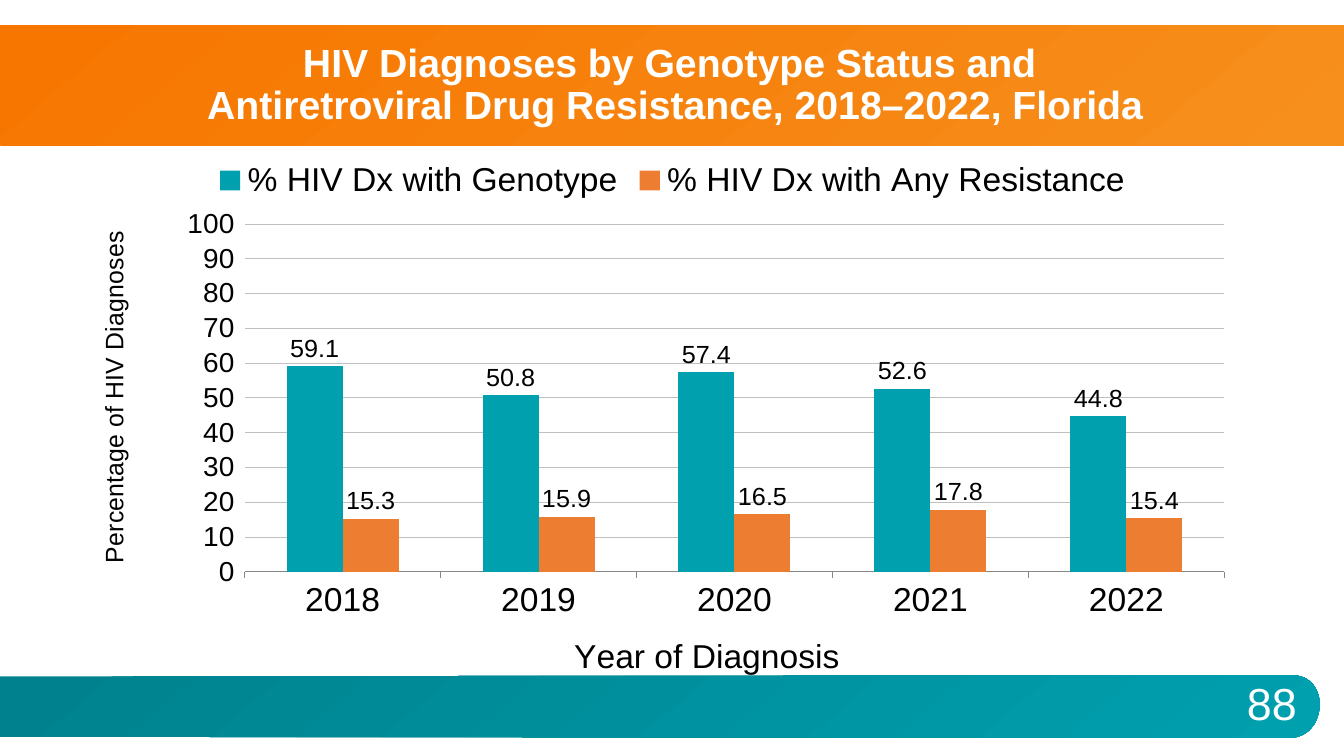
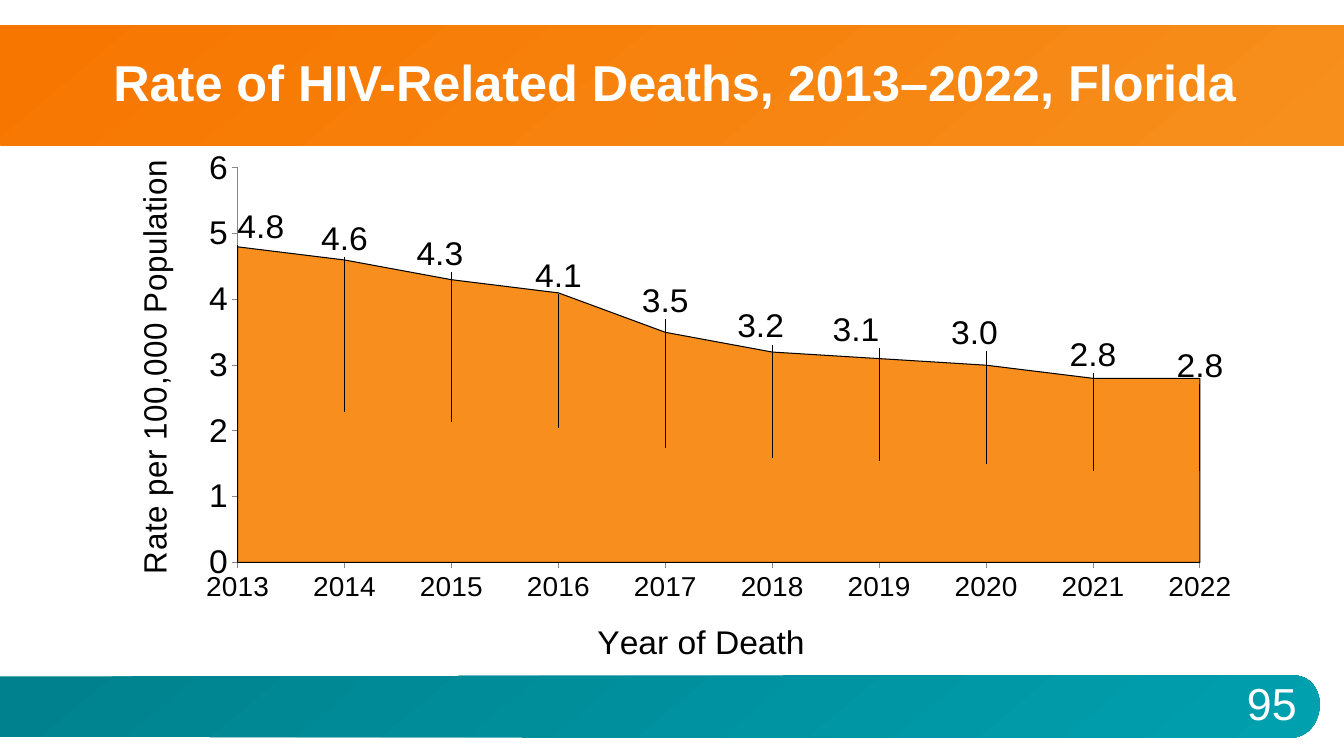
from lxml import etree
from pptx import Presentation
from pptx import util as u
from pptx.chart.data import CategoryChartData
from pptx.dml.color import RGBColor
from pptx.enum import chart as charts, shapes, text
from pptx.oxml import ns

WIDTH, HEIGHT = 13.33, 7.5
FONT = "Arial"
COLORS = {
    "white": "FFFFFF", "black": "000000", "grid": "BFBFBF", "axis": "878787",
    "teal_dark": "00828E", "teal": "00A0AF",
    "orange_dark": "F77600", "orange": "F78F1C",
    "resistance": "ED7D31", "area": "F78E1E",
}
TITLE_BAND = (0, 0.25, WIDTH, 1.19)
TITLE_BOX = (0.74, 0.26, 11.91, 1.18)
NUMBER_BOX = (12.07, 6.68, 1.09, 0.59)
FOOTER_TOP, FOOTER_BOTTOM = 6.7, 7.32
FOOTER_CURVE = ((12.8, FOOTER_TOP), (13.2, 6.68), (13.17, 7.31), (12.8, FOOTER_BOTTOM))
UNITS_PER_INCH = 1000


def color(name):
    """Return the named colour."""
    return RGBColor.from_string(COLORS[name])


def inches(box):
    """Convert a box to lengths."""
    return [u.Inches(value) for value in box]


def style_font(font, size, name="black", bold=False):
    """Set the face, size, colour and weight of a font."""
    font.name, font.size, font.bold = FONT, u.Pt(size), bold
    font.color.rgb = color(name)


def style_band(shape, start, end):
    """Give a band its diagonal gradient without outline or shadow."""
    shape.shadow.inherit = False
    shape.line.fill.background()
    shape.fill.gradient()
    shape.fill.gradient_angle = 310
    for stop, name, position in zip(shape.fill.gradient_stops, (start, end), (0.02, 1)):
        stop.color.rgb = color(name)
        stop.position = position


def bezier(points, steps=24):
    """Return points along a cubic curve."""
    def at(share):
        """Return the point at one share of the curve."""
        rest = 1 - share
        weights = (rest ** 3, 3 * rest ** 2 * share, 3 * rest * share ** 2, share ** 3)
        return tuple(sum(w * p[axis] for w, p in zip(weights, points)) for axis in (0, 1))
    return [at(step / steps) for step in range(steps + 1)]


def add_text(slide, box, words, size, bold=False, spacing=1):
    """Add centred white text in a box."""
    frame = slide.shapes.add_textbox(*inches(box)).text_frame
    frame.word_wrap = True
    frame.vertical_anchor = text.MSO_ANCHOR.MIDDLE
    frame.text = words
    paragraph = frame.paragraphs[0]
    paragraph.alignment = text.PP_ALIGN.CENTER
    paragraph.line_spacing = spacing
    style_font(paragraph.font, size, "white", bold)


def add_bands(slide, number):
    """Draw the footer with its number and the title band."""
    outline = [(round(x * UNITS_PER_INCH), round(y * UNITS_PER_INCH))
               for x, y in bezier(FOOTER_CURVE) + [(0, 7.31), (0, 6.71)]]
    builder = slide.shapes.build_freeform(*outline[0], scale=u.Inches(1) / UNITS_PER_INCH)
    builder.add_line_segments(outline[1:], close=True)
    style_band(builder.convert_to_shape(), "teal_dark", "teal")
    band = slide.shapes.add_shape(shapes.MSO_SHAPE.RECTANGLE, *inches(TITLE_BAND))
    style_band(band, "orange_dark", "orange")
    add_text(slide, NUMBER_BOX, number, 32)


def chart_element(parent, tag, index, value=None):
    """Insert a chart element at an index of its parent."""
    child = etree.Element(ns.qn(f"c:{tag}"))
    if value is not None:
        child.set("val", str(value))
    parent.insert(index, child)
    return child


def set_layout(parent, index, places, inner=False, edge=True):
    """Place a chart part by shares of the chart's size."""
    for old in parent.findall(ns.qn("c:layout")):
        parent.remove(old)
    manual = chart_element(chart_element(parent, "layout", index), "manualLayout", 0)
    settings = [("layoutTarget", "inner")] if inner else []
    settings += [("xMode", "edge"), ("yMode", "edge")] if edge else []
    for tag, value in settings + list(zip("xywh", places)):
        chart_element(manual, tag, len(manual), value)


def style_axis(axis, title, title_size, place, label_size, rotation=0):
    """Set an axis title, its place, and the tick labels."""
    axis.has_major_gridlines = False
    axis.major_tick_mark = charts.XL_TICK_MARK.OUTSIDE
    axis.minor_tick_mark = charts.XL_TICK_MARK.NONE
    axis.format.line.color.rgb = color("axis")
    style_font(axis.tick_labels.font, label_size)
    frame = axis.axis_title.text_frame
    frame.text = title
    style_font(frame.paragraphs[0].font, title_size)
    body = frame._txBody.find(ns.qn("a:bodyPr"))
    body.set("rot", str(rotation * 60000))
    body.set("vert", "horz")
    set_layout(axis.axis_title._element, 1, place)


def add_chart(slide, kind, box, categories, series, fills, plot_place, maximum, step):
    """Add a chart with coloured series and a fixed value scale."""
    data = CategoryChartData()
    data.categories = categories
    for name, values in series:
        data.add_series(name, values)
    chart = slide.shapes.add_chart(kind, *inches(box), data).chart
    style_font(chart.font, 24)
    chart.has_title = chart.has_legend = False
    chart.plots[0].vary_by_categories = False
    for item, fill in zip(chart.plots[0].series, fills):
        item.format.fill.solid()
        item.format.fill.fore_color.rgb = color(fill)
    axis = chart.value_axis
    axis.minimum_scale, axis.maximum_scale, axis.major_unit = 0, maximum, step
    set_layout(chart._chartSpace.chart.plotArea, 0, plot_place, inner=True)
    return chart


def show_values(series, size, number_format):
    """Show the values of a series as labels."""
    labels = series.data_labels
    labels.show_value = True
    labels.number_format, labels.number_format_is_linked = number_format, False
    style_font(labels.font, size)
    return labels


def add_resistance_chart(slide, box):
    """Add the columns for genotype and resistance."""
    chart = add_chart(
        slide, charts.XL_CHART_TYPE.COLUMN_CLUSTERED, box,
        [str(year) for year in range(2018, 2023)],
        [("% HIV Dx with Genotype", (59.1, 50.8, 57.4, 52.6, 44.8)),
         ("% HIV Dx with Any Resistance", (15.3, 15.9, 16.5, 17.8, 15.4))],
        ("teal", "resistance"), (0.131, 0.144, 0.845, 0.659), 100, 10)
    chart.plots[0].gap_width, chart.plots[0].overlap = 150, 0
    for series in chart.plots[0].series:
        labels = show_values(series, 18, "0.0")
        labels.position = charts.XL_LABEL_POSITION.OUTSIDE_END
    style_axis(chart.category_axis, "Year of Diagnosis", 24, (0.41, 0.91), 24)
    axis = chart.value_axis
    style_axis(axis, "Percentage of HIV Diagnoses", 18, (0, 0.16), 20, -90)
    axis.format.line.fill.background()
    axis.has_major_gridlines = True
    axis.major_gridlines.format.line.color.rgb = color("grid")
    axis.major_gridlines.format.line.width = u.Pt(0.75)
    axis.tick_labels.number_format, axis.tick_labels.number_format_is_linked = "0", False
    chart.has_legend = True
    chart.legend.position = charts.XL_LEGEND_POSITION.TOP
    chart.legend.include_in_layout = False
    style_font(chart.legend.font, 24)


def add_death_chart(slide, box):
    """Add the area of death rates with labels above its edge."""
    rates = (4.8, 4.6, 4.3, 4.1, 3.5, 3.2, 3.1, 3, 2.8, 2.8)
    chart = add_chart(
        slide, charts.XL_CHART_TYPE.AREA, box, [str(year) for year in range(2013, 2023)],
        [("Series 1", rates)], ("area",), (0.125, 0.065, 0.83, 0.755), 6, 1)
    series = chart.plots[0].series[0]
    series.format.line.color.rgb = color("black")
    series.format.line.width = u.Pt(0.75)
    show_values(series, 24, "#,##0.0")
    shifts = ((0.02, -0.34), (0, -0.33), (-0.01, -0.32), (0, -0.29), (0, -0.28),
              (-0.01, -0.25), (-0.02, -0.25), (-0.01, -0.25), (0, -0.22), (0, -0.2))
    for index, shift in enumerate(shifts):
        style_font(series.points[index].data_label.font, 24)
        label = series._element.findall(".//" + ns.qn("c:dLbl"))[index]
        set_layout(label, 1, shift, edge=False)
        number = chart_element(label, "numFmt", 2)
        number.set("formatCode", "#,##0.0")
        number.set("sourceLinked", "0")
    style_axis(chart.category_axis, "Year of Death", 24, (0.43, 0.92), 20)
    axis = chart.value_axis
    style_axis(axis, "Rate per 100,000 Population", 23, (0.03, 0.06), 24, -90)
    axis.tick_labels.number_format, axis.tick_labels.number_format_is_linked = "#,##0", False
    axis._element.find(ns.qn("c:crossBetween")).set("val", "midCat")


def add_slide(presentation, title, title_size, number, draw_chart, chart_top):
    """Add one slide with bands, chart and title."""
    slide = presentation.slides.add_slide(presentation.slide_layouts[6])
    add_bands(slide, number)
    draw_chart(slide, (0.92, chart_top, 11.5, 5.33))
    add_text(slide, TITLE_BOX, title, title_size, bold=True, spacing=0.9)


def main():
    """Build and save the presentation."""
    presentation = Presentation()
    presentation.slide_width, presentation.slide_height = inches((WIDTH, HEIGHT))
    add_slide(presentation,
              "HIV Diagnoses by Genotype Status and \v"
              "Antiretroviral Drug Resistance, 2018–2022, Florida",
              28, "88", add_resistance_chart, 1.47)
    add_slide(presentation, "Rate of HIV-Related Deaths, 2013–2022, Florida",
              36, "95", add_death_chart, 1.33)
    presentation.save("out.pptx")


if __name__ == "__main__":
    main()
